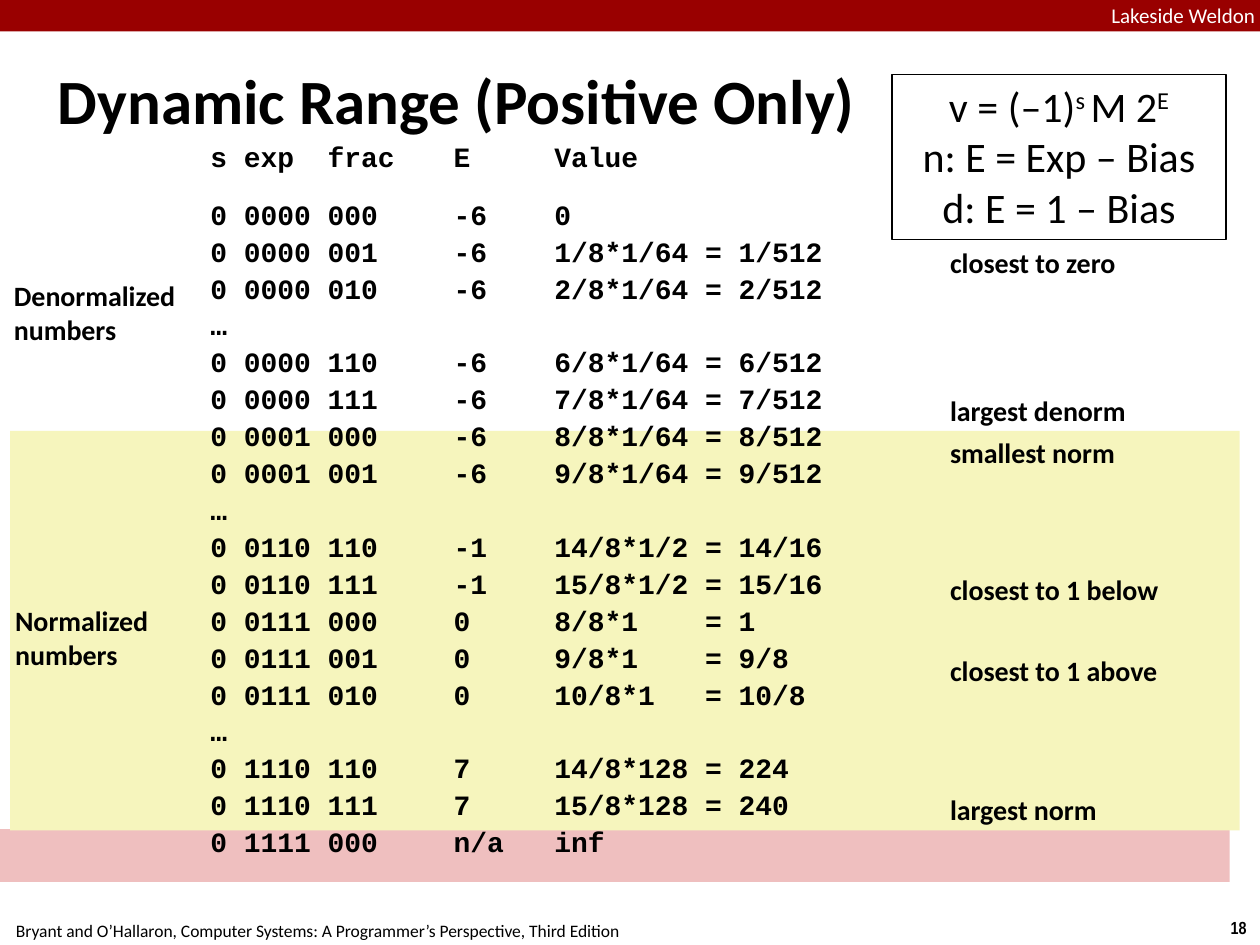
from lxml import etree
from pptx import Presentation
from pptx.dml.color import RGBColor
from pptx.enum.shapes import MSO_SHAPE
from pptx.enum.text import MSO_ANCHOR, PP_ALIGN
from pptx.oxml.ns import qn
from pptx.util import Inches, Pt

RECTANGLE = MSO_SHAPE.RECTANGLE
LEFT, CENTER = PP_ALIGN.LEFT, PP_ALIGN.CENTER
TOP, MIDDLE = MSO_ANCHOR.TOP, MSO_ANCHOR.MIDDLE
COLORS = {"ink": "000000", "paper": "FFFFFF", "banner": "990000",
          "normalized": "F6F5BD", "special": "EFBFBF"}
SUPERSCRIPT = "32000"
TAB_STOPS = (1.93, 2.73)

FLOAT_ROWS = [
    ("s exp  frac", "E", "Value"),
    ("0 0000 000", "-6", "0"),
    ("0 0000 001", "-6", "1/8*1/64 = 1/512"),
    ("0 0000 010", "-6", "2/8*1/64 = 2/512"),
    ("…",),
    ("0 0000 110", "-6", "6/8*1/64 = 6/512"),
    ("0 0000 111", "-6", "7/8*1/64 = 7/512"),
    ("0 0001 000", "-6", "8/8*1/64 = 8/512"),
    ("0 0001 001", "-6", "9/8*1/64 = 9/512"),
    ("…",),
    ("0 0110 110", "-1", "14/8*1/2 = 14/16"),
    ("0 0110 111", "-1", "15/8*1/2 = 15/16"),
    ("0 0111 000", "0", "8/8*1    = 1"),
    ("0 0111 001", "0", "9/8*1    = 9/8"),
    ("0 0111 010", "0", "10/8*1   = 10/8"),
    ("…",),
    ("0 1110 110", "7", "14/8*128 = 224"),
    ("0 1110 111", "7", "15/8*128 = 240"),
    ("0 1111 000", "n/a", "inf"),
]
REMARKS = [
    (1.91, "closest to zero"), (3.08, "largest denorm"),
    (3.42, "smallest norm"), (4.5, "closest to 1 below"),
    (5.15, "closest to 1 above"), (6.25, "largest norm"),
]
RANGE_NAMES = [
    (0.07, 2.17, 1.55, ["Denormalized", "numbers"]),
    (0.08, 4.75, 1.29, ["Normalized", "numbers"]),
]
FORMULAS = [
    [("v = (–1)", False), ("s ", True), ("M 2", False), ("E", True)],
    [("n: E = Exp – Bias", False)],
    [("d: E = 1 – Bias", False)],
]


class SlideBuilder:
    def __init__(self, page, font="Calibri"):
        self.page = page
        self.font = font

    def rectangle(self, left, top, width, height, fill=None, line=None):
        box = self.page.shapes.add_shape(
            RECTANGLE, Inches(left), Inches(top), Inches(width), Inches(height))
        box.shadow.inherit = False
        if fill:
            box.fill.solid()
            box.fill.fore_color.rgb = RGBColor.from_string(COLORS[fill])
        else:
            box.fill.background()
        if line:
            box.line.color.rgb = RGBColor.from_string(COLORS[line])
            box.line.width = Pt(0.75)
        else:
            box.line.fill.background()
        return box

    def span(self, para, text, size, bold=False, color="ink", font=None, raised=False):
        span = para.add_run()
        span.text = text
        span.font.name = font or self.font
        span.font.size = Pt(size)
        span.font.bold = bold
        span.font.color.rgb = RGBColor.from_string(COLORS[color])
        if raised:
            span._r.get_or_add_rPr().set("baseline", SUPERSCRIPT)

    def paragraphs(self, frame, count, align):
        """Yield count paragraphs, the first being the one already there."""
        for index in range(count):
            para = frame.add_paragraph() if index else frame.paragraphs[0]
            para.alignment = align
            yield para

    def text(self, left, top, width, height, lines, size, align=LEFT,
             anchor=TOP, wrap=False, inset=0.04, **style):
        box = self.page.shapes.add_textbox(
            Inches(left), Inches(top), Inches(width), Inches(height))
        frame = box.text_frame
        frame.word_wrap = wrap
        frame.vertical_anchor = anchor
        frame.margin_left = frame.margin_right = Inches(inset)
        frame.margin_top = frame.margin_bottom = Inches(min(inset, 0.05))
        for para, line in zip(self.paragraphs(frame, len(lines), align), lines):
            self.span(para, line, size, **style)
        return frame

    def tabbed_rows(self, left, top, width, height, rows):
        """Set rows in columns held by tab stops, with a gap below the heading."""
        frame = self.text(left, top, width, height, ["\t".join(row) for row in rows],
                          16, wrap=True, inset=0, bold=True, font="Courier New")
        for index, para in enumerate(frame.paragraphs):
            para.line_spacing = 1.1
            para.space_before = Pt(12 if index == 1 else 0)
            tabs = etree.SubElement(para._p.get_or_add_pPr(), qn("a:tabLst"))
            for stop in TAB_STOPS:
                etree.SubElement(tabs, qn("a:tab"), pos=str(Inches(stop)), algn="l")

    def formula_box(self, left, top, width, height, formulas):
        box = self.rectangle(left, top, width, height, line="ink")
        frame = box.text_frame
        frame.word_wrap = True
        frame.vertical_anchor = TOP
        for para, parts in zip(self.paragraphs(frame, len(formulas), CENTER), formulas):
            for text, raised in parts:
                self.span(para, text, 24, raised=raised)


def main():
    deck = Presentation()
    deck.slide_width, deck.slide_height = Inches(10), Inches(7.5)
    slide = SlideBuilder(deck.slides.add_slide(deck.slide_layouts[6]))

    slide.text(9.66, 7.23, 0.34, 0.27, ["18"], 10, align=CENTER, inset=0.1,
               bold=True, font="Arial Narrow")
    slide.text(-0.02, 7.25, 5.08, 0.27,
               ["Bryant and O’Hallaron, Computer Systems: "
                "A Programmer’s Perspective, Third Edition"],
               10, align=CENTER, inset=0.1)
    slide.rectangle(0, 0, 10, 0.25, fill="banner")
    slide.text(8.82, 0.02, 1.18, 0.19, ["Lakeside Weldon"], 12, inset=0, color="paper")

    slide.rectangle(0, 6.58, 9.76, 0.42, fill="special")
    slide.rectangle(0.08, 3.42, 9.76, 3.17, fill="normalized")
    slide.tabbed_rows(1.67, 1.08, 5.08, 6.08, FLOAT_ROWS)
    slide.text(0.42, 0.28, 9.17, 1.01, ["Dynamic Range (Positive Only)"], 36,
               anchor=MIDDLE, wrap=True, bold=True)

    for top, remark in REMARKS:
        slide.text(7.5, top, 1.75, 0.35, [remark], 16, bold=True)
    for left, top, width, lines in RANGE_NAMES:
        slide.text(left, top, width, 0.62, lines, 16, bold=True)
    slide.formula_box(7.08, 0.59, 2.65, 1.31, FORMULAS)

    deck.save("out.pptx")


if __name__ == "__main__":
    main()
